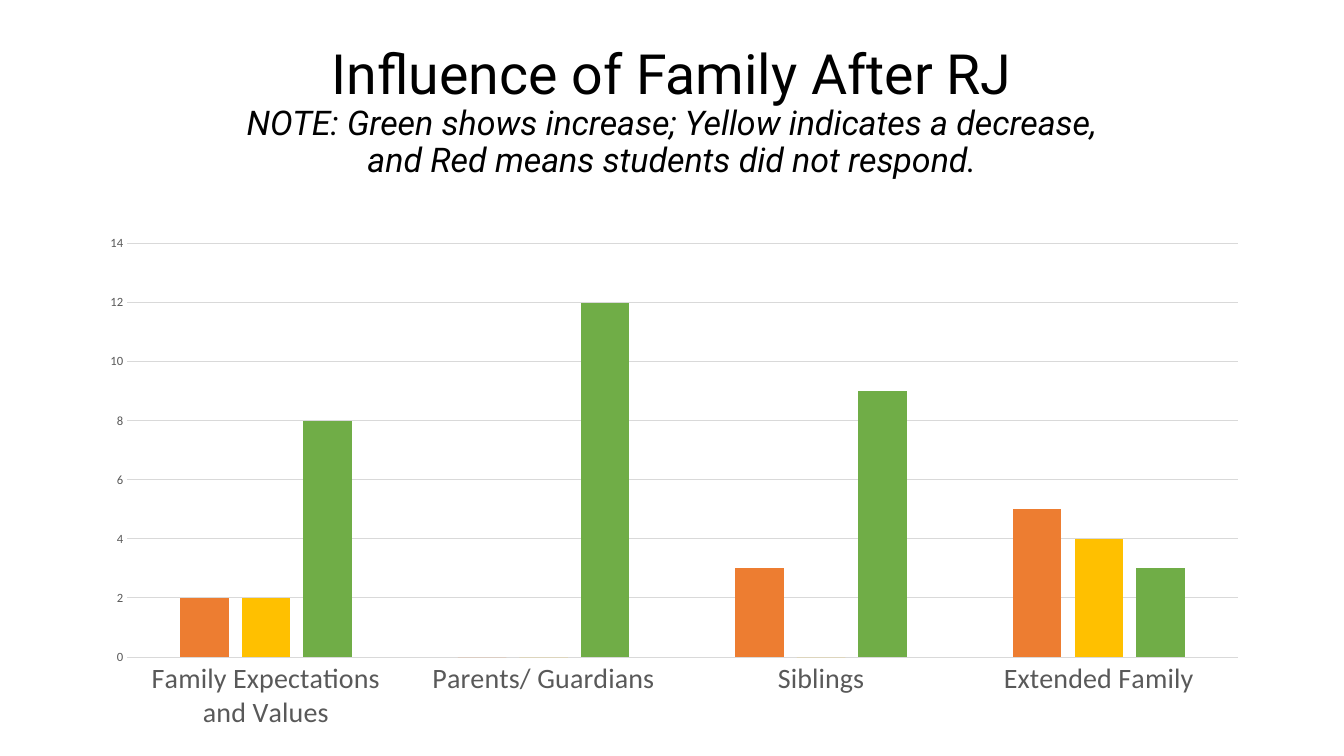
from dataclasses import dataclass

import pptx
import pptx.chart.data
import pptx.dml.color
import pptx.enum.chart
import pptx.enum.text
import pptx.oxml
import pptx.oxml.ns
import pptx.util
from pptx.util import Pt


@dataclass(frozen=True)
class Theme:
    title_font: str = "Roboto"
    chart_font: str = "Calibri"
    title_size: float = 39.6
    note_size: float = 24.3
    category_size: float = 20
    value_size: float = 9
    chart_size: float = 10
    ink: str = "000000"
    label: str = "595959"
    grid: str = "D9D9D9"


THEME = Theme()

TITLE = "Influence of Family After RJ"
NOTE_LINES = (
    "NOTE: Green shows increase; Yellow indicates a decrease,",
    "and Red means students did not respond.",
)
CATEGORIES = (
    "Family Expectations and Values",
    "Parents/ Guardians",
    "Siblings",
    "Extended Family",
)
RESPONSES = (
    ("No Response", (2, 0, 3, 5), "ED7D31"),
    ("Less Influence After RJ", (2, 0, 0, 4), "FFC000"),
    ("More Influence After RJ", (8, 12, 9, 3), "70AD47"),
)


def rgb(code):
    return pptx.dml.color.RGBColor.from_string(code)


def style_font(font, name, size, color, italic=False):
    font.name = name
    font.size = Pt(size)
    font.italic = italic
    font.color.rgb = rgb(color)


def add_title(page, left, top, width, height):
    box = page.shapes.add_textbox(Pt(left), Pt(top), Pt(width), Pt(height))
    frame = box.text_frame
    frame.word_wrap = True
    frame.vertical_anchor = pptx.enum.text.MSO_ANCHOR.MIDDLE
    para = frame.paragraphs[0]
    para.alignment = pptx.enum.text.PP_ALIGN.CENTER
    para.line_spacing = 0.9
    span = para.add_run()
    span.text = TITLE
    style_font(span.font, THEME.title_font, THEME.title_size, THEME.ink)
    for line in NOTE_LINES:
        para.add_line_break()
        span = para.add_run()
        span.text = line
        style_font(span.font, THEME.title_font, THEME.note_size, THEME.ink, italic=True)


def place_plot(chart, x, y, w, h):
    """Fix the inner plot area at fractions of the chart's size."""
    area = chart._chartSpace.chart.plotArea
    for layout in area.findall(pptx.oxml.ns.qn("c:layout")):
        area.remove(layout)
    sizes = "".join(
        f'<c:{key} val="{value}"/>' for key, value in zip("xywh", (x, y, w, h))
    )
    area.insert(0, pptx.oxml.parse_xml(
        f'<c:layout {pptx.oxml.ns.nsdecls("c")}><c:manualLayout>'
        '<c:layoutTarget val="inner"/><c:xMode val="edge"/><c:yMode val="edge"/>'
        f"{sizes}</c:manualLayout></c:layout>"
    ))


def style_line(line):
    line.color.rgb = rgb(THEME.grid)
    line.width = Pt(0.75)


def style_axes(chart):
    categories, values = chart.category_axis, chart.value_axis
    for axis, size in ((categories, THEME.category_size), (values, THEME.value_size)):
        axis.major_tick_mark = pptx.enum.chart.XL_TICK_MARK.NONE
        axis.minor_tick_mark = pptx.enum.chart.XL_TICK_MARK.NONE
        style_font(axis.tick_labels.font, THEME.chart_font, size, THEME.label)
    style_line(categories.format.line)
    values.format.line.fill.background()
    values.minimum_scale, values.maximum_scale, values.major_unit = 0, 14, 2
    values.has_major_gridlines = True
    style_line(values.major_gridlines.format.line)


def add_response_chart(page, left, top, width, height):
    data = pptx.chart.data.CategoryChartData()
    data.categories = CATEGORIES
    for name, counts, _ in RESPONSES:
        data.add_series(name, counts)
    chart = page.shapes.add_chart(
        pptx.enum.chart.XL_CHART_TYPE.COLUMN_CLUSTERED,
        Pt(left), Pt(top), Pt(width), Pt(height), data,
    ).chart
    chart.has_title = False
    chart.has_legend = False
    style_font(chart.font, THEME.chart_font, THEME.chart_size, THEME.ink)
    plot = chart.plots[0]
    plot.vary_by_categories = False
    plot.gap_width = 219
    plot.overlap = -27
    for series, (_, _, color) in zip(plot.series, RESPONSES):
        series.format.fill.solid()
        series.format.fill.fore_color.rgb = rgb(color)
    style_axes(chart)
    place_plot(chart, 0.03, 0.015, 0.958, 0.795)


def main():
    deck = pptx.Presentation()
    deck.slide_width, deck.slide_height = Pt(960), Pt(540)
    page = deck.slides.add_slide(deck.slide_layouts[6])
    add_title(page, 66, 28.75, 828, 104.4)
    add_response_chart(page, 66, 168.5, 828, 371.5)
    deck.save("out.pptx")


if __name__ == "__main__":
    main()
